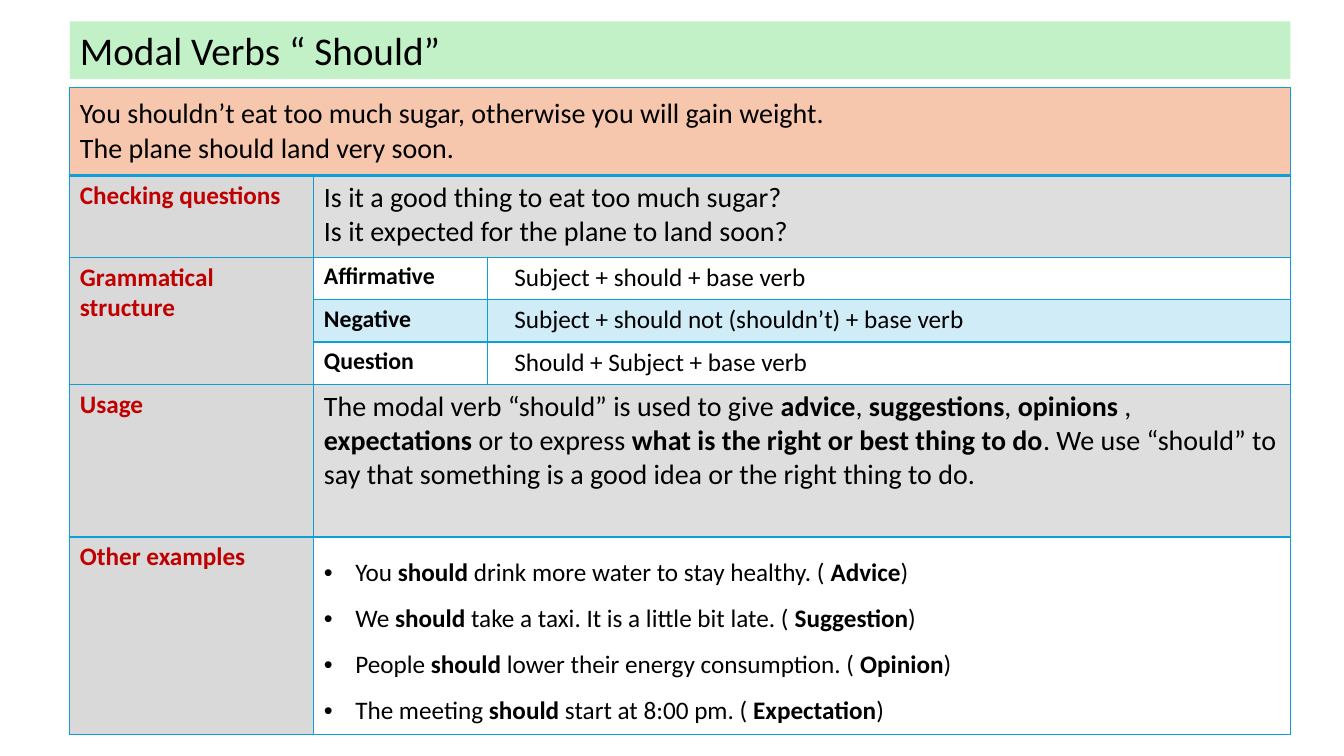
"""Build a one-slide grammar summary of the modal verb should."""
from lxml import etree
from pptx import Presentation
from pptx import util as u
from pptx.dml.color import RGBColor
from pptx.enum import text as t
from pptx.oxml.ns import qn

COLORS = {"title": "C2F1C8", "example": "F6C6AD", "label": "D9D9D9", "shade": "DEDEDE",
          "band": "CFECF7", "border": "0F9ED5", "red": "C00000", "black": "000000"}
TITLE = "Modal Verbs “ Should”"
LEFT, WIDTH = 1.76, 30.76
COLUMNS = [6.15, 4.37, 20.24]
ROWS = [2.21, 2.06, 1.07, 1.07, 1.07, 3.84, 4.98]
MERGES = [((0, 0), (0, 2)), ((1, 1), (1, 2)), ((2, 0), (4, 0)),
          ((5, 1), (5, 2)), ((6, 1), (6, 2))]

EXAMPLES = ["You shouldn’t eat too much sugar, otherwise you will gain weight.",
            "The plane should land very soon."]
LABELS = {1: "Checking questions", 2: "Grammatical structure", 5: "Usage", 6: "Other examples"}
QUESTIONS = ["Is it a good thing to eat too much sugar?",
             "Is it expected for the plane to land soon?"]
STRUCTURES = [("Affirmative", "Subject + should + base verb", None),
              ("Negative", "Subject + should not (shouldn’t) + base verb", "band"),
              ("Question", "Should + Subject + base verb", None)]
USAGE = ["The modal verb “should” is used to give **advice**, **suggestions**, **opinions **, "
         "**expectations** or to express **what is the right or best thing to do**. "
         "We use “should” to say that something is a good idea or the right thing to do."]
SENTENCES = ["You **should** drink more water to stay healthy. ( **Advice**)",
             "We **should** take a taxi. It is a little bit late. ( **Suggestion**)",
             "People **should** lower their energy consumption. ( **Opinion**)",
             "The meeting **should** start at 8:00 pm. ( **Expectation**)"]


def write(frame, lines, size=18, color="black", bold=False, bullet=False, spacing=None):
    """Write one paragraph per line; double asterisks switch bold."""
    for number, line in enumerate(lines):
        para = frame.add_paragraph() if number else frame.paragraphs[0]
        para.alignment = t.PP_ALIGN.LEFT
        if spacing:
            para.line_spacing = spacing
        if bullet:
            props = para._p.get_or_add_pPr()
            props.set("marL", str(u.Cm(0.79)))
            props.set("indent", str(u.Cm(-0.79)))
            etree.SubElement(props, qn("a:buFont")).set("typeface", "Arial")
            etree.SubElement(props, qn("a:buChar")).set("char", "•")
        for part, words in enumerate(line.split("**")):
            if words:
                span = para.add_run()
                span.text = words
                span.font.name = "Calibri"
                span.font.size = u.Pt(size)
                span.font.bold = bold or part % 2 == 1
                span.font.color.rgb = RGBColor.from_string(COLORS[color])


def paint(target, color):
    """Fill a shape or cell, or clear it when no color is given."""
    if color:
        target.fill.solid()
        target.fill.fore_color.rgb = RGBColor.from_string(COLORS[color])
    else:
        target.fill.background()


def outline(cell, row):
    """Draw the four borders, heavier between the first two rows."""
    props = cell._tc.get_or_add_tcPr()
    for place, side in enumerate("LRTB"):
        heavy = (row, side) in [(0, "B"), (1, "T")]
        line = etree.Element(qn(f"a:ln{side}"), w=str(u.Pt(2 if heavy else 1)))
        solid = etree.SubElement(line, qn("a:solidFill"))
        etree.SubElement(solid, qn("a:srgbClr")).set("val", COLORS["border"])
        props.insert(place, line)


def main():
    """Assemble the slide and save it."""
    deck = Presentation()
    deck.slide_width, deck.slide_height = u.Cm(33.87), u.Cm(19.05)
    page = deck.slides.add_slide(deck.slide_layouts[5])

    title = page.shapes.title
    title.left, title.top, title.width, title.height = map(u.Cm, (LEFT, 0.54, WIDTH, 1.45))
    paint(title, "title")
    title.text_frame.auto_size = t.MSO_AUTO_SIZE.NONE
    write(title.text_frame, [TITLE], size=28)

    table = page.shapes.add_table(len(ROWS), len(COLUMNS), u.Cm(LEFT), u.Cm(2.21),
                                  u.Cm(WIDTH), u.Cm(sum(ROWS))).table
    table.first_row = table.horz_banding = False
    for column, width in zip(table.columns, COLUMNS):
        column.width = u.Cm(width)
    for number, (row, height) in enumerate(zip(table.rows, ROWS)):
        row.height = u.Cm(height)
        for cell in row.cells:
            paint(cell, None)
            outline(cell, number)
    for start, end in MERGES:
        table.cell(*start).merge(table.cell(*end))

    def put(row, column, lines, fill=None, **style):
        cell = table.cell(row, column)
        paint(cell, fill)
        write(cell.text_frame, lines, **style)
        return cell

    put(0, 0, EXAMPLES, "example", size=20).vertical_anchor = t.MSO_ANCHOR.MIDDLE
    for row, label in LABELS.items():
        put(row, 0, [label], "label", color="red", bold=True)
    put(1, 1, QUESTIONS, "shade", size=20)
    for row, (form, pattern, fill) in enumerate(STRUCTURES, 2):
        put(row, 1, [form], fill, size=17, bold=True)
        put(row, 2, [pattern], fill).margin_left = u.Cm(0.68)
    put(5, 1, USAGE, "shade", size=20)
    put(6, 1, SENTENCES, bullet=True, spacing=1.5)

    deck.save("out.pptx")


if __name__ == "__main__":
    main()
